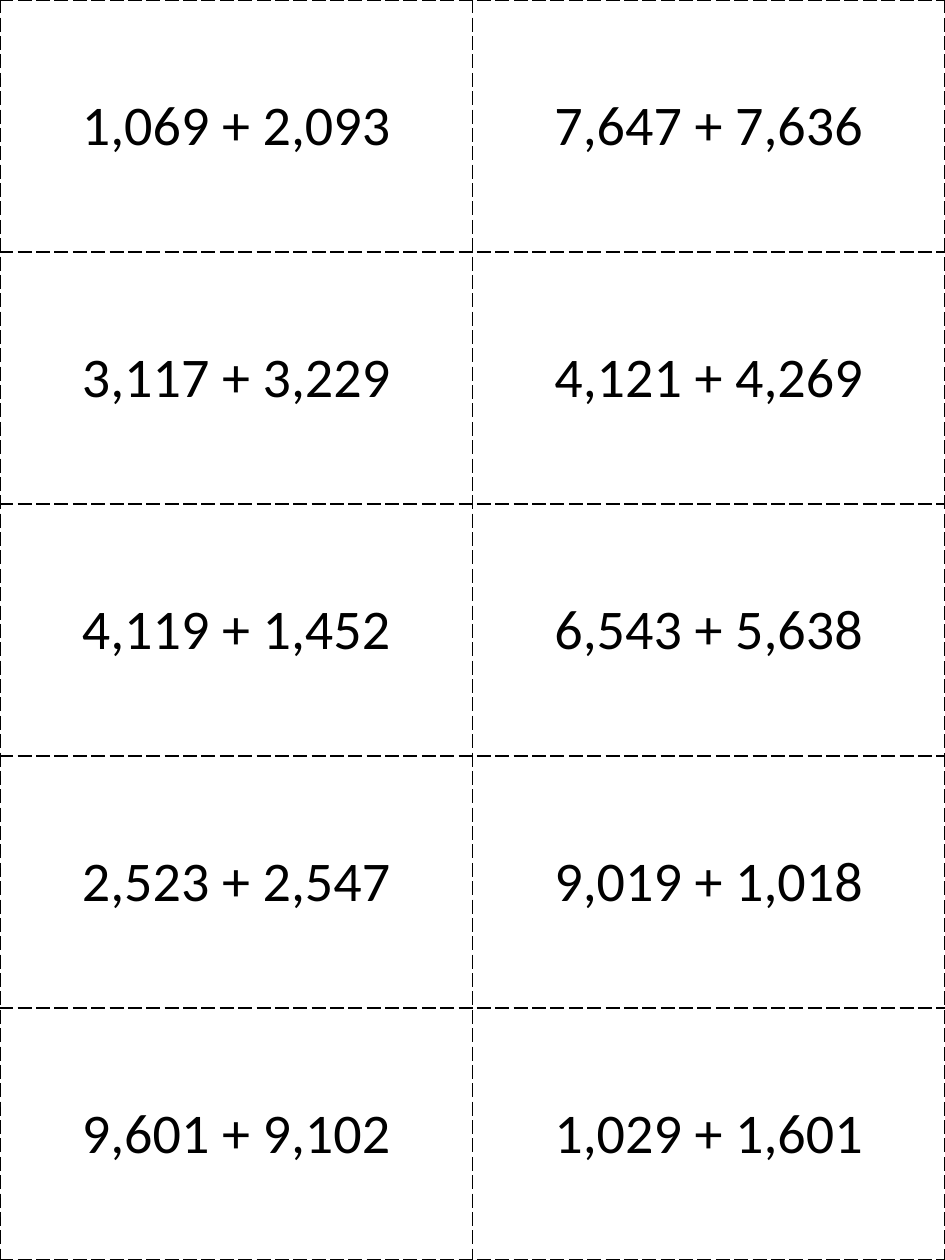
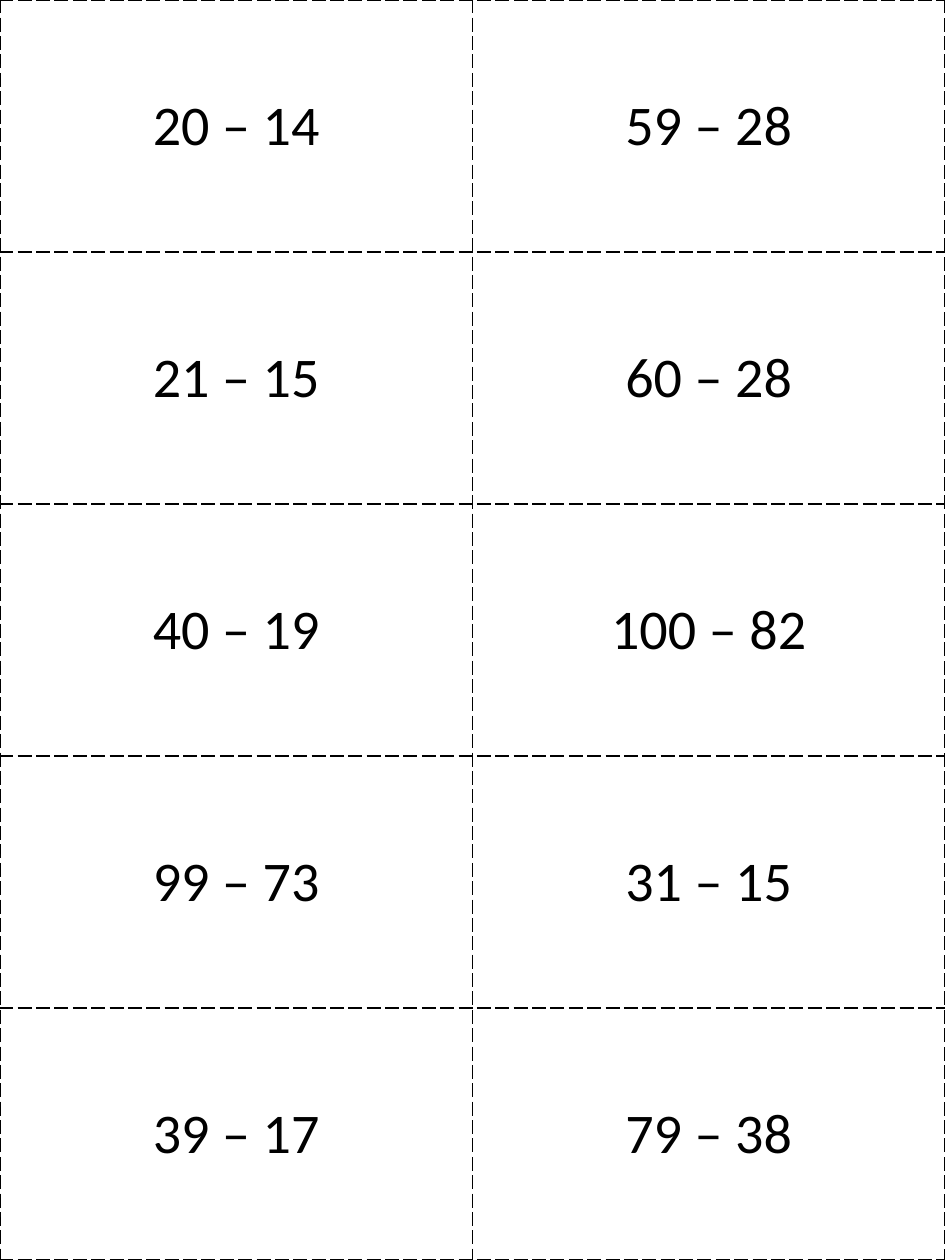
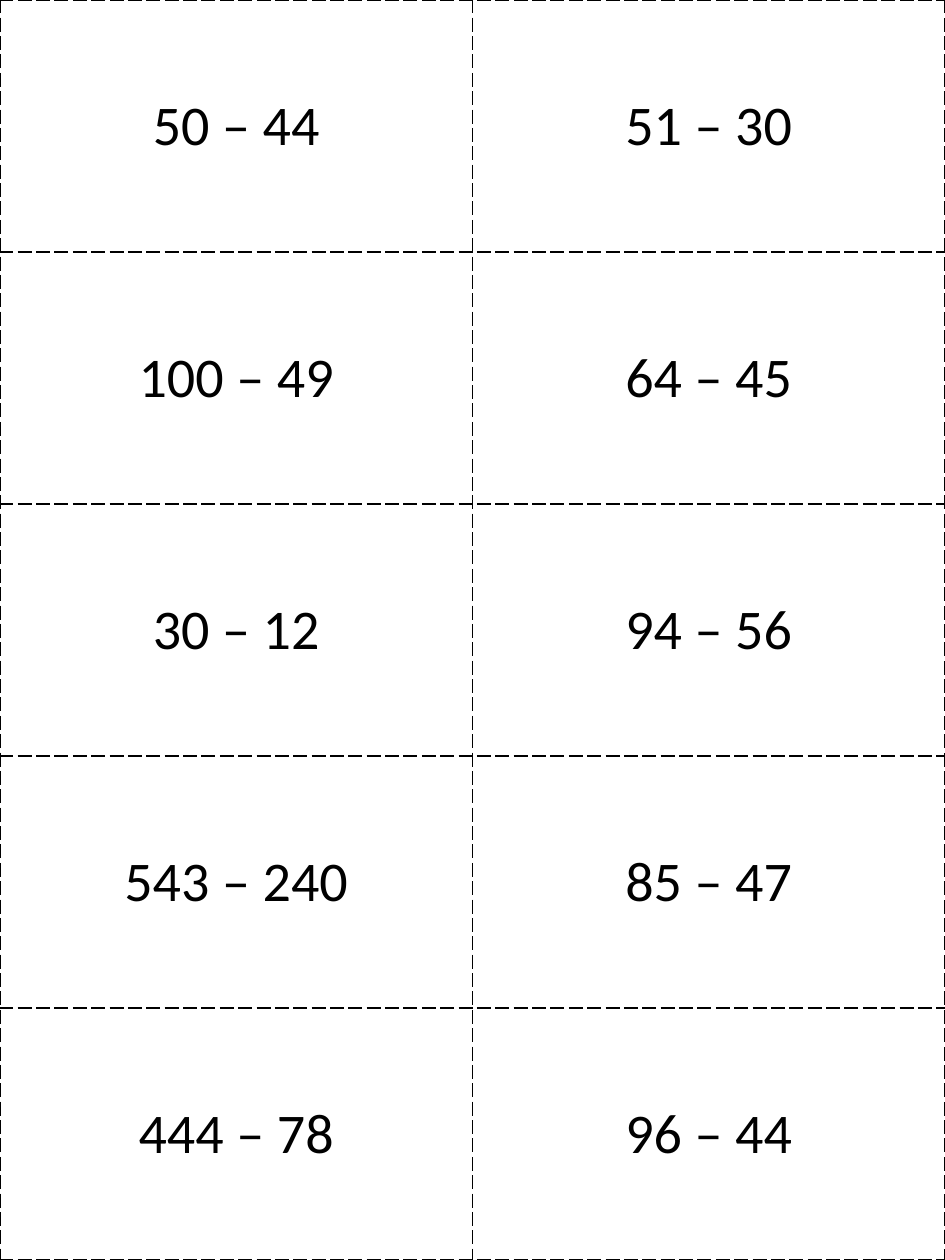
from lxml import etree
from pptx import Presentation
from pptx import util as u
from pptx.dml.color import RGBColor
from pptx.enum import text
from pptx.oxml import ns

BLACK = RGBColor(0x00, 0x00, 0x00)
WHITE = RGBColor(0xFF, 0xFF, 0xFF)
PAGE_WIDTH, PAGE_HEIGHT = u.Pt(540), u.Pt(720)
PAGE_BOX = (0, 0, PAGE_WIDTH, PAGE_HEIGHT)
BORDER_WIDTH = u.Pt(1)
BORDER_DASH = "lgDash"
CARD_FONT = {"name": "Calibri", "size": u.Pt(32), "bold": False}
PLAIN_TABLE = {"first_row": False, "horz_banding": False}

CARD_SHEETS = [
    [
        ("1,069 + 2,093", "7,647 + 7,636"),
        ("3,117 + 3,229", "4,121 + 4,269"),
        ("4,119 + 1,452", "6,543 + 5,638"),
        ("2,523 + 2,547", "9,019 + 1,018"),
        ("9,601 + 9,102", "1,029 + 1,601"),
    ],
    [
        ("20 – 14", "59 – 28"),
        ("21 – 15", "60 – 28"),
        ("40 – 19", "100 – 82"),
        ("99 – 73", "31 – 15"),
        ("39 – 17", "79 – 38"),
    ],
    [
        ("50 – 44", "51 – 30"),
        ("100 – 49", "64 – 45"),
        ("30 – 12", "94 – 56"),
        ("543 – 240", "85 – 47"),
        ("444 – 78", "96 – 44"),
    ],
]


def set_attributes(target, values):
    for name, value in values.items():
        setattr(target, name, value)


def add_cut_lines(cell):
    """Give all four sides of the cell a dashed border."""
    properties = cell._tc.get_or_add_tcPr()
    for side in ("lnL", "lnR", "lnT", "lnB"):
        line = etree.SubElement(properties, ns.qn(f"a:{side}"), w=str(BORDER_WIDTH))
        fill = etree.SubElement(line, ns.qn("a:solidFill"))
        etree.SubElement(fill, ns.qn("a:srgbClr"), val=str(BLACK))
        etree.SubElement(line, ns.qn("a:prstDash"), val=BORDER_DASH)


def fill_card(cell, problem):
    add_cut_lines(cell)
    cell.fill.background()
    cell.vertical_anchor = text.MSO_ANCHOR.MIDDLE
    paragraph = cell.text_frame.paragraphs[0]
    paragraph.alignment = text.PP_ALIGN.CENTER
    run = paragraph.add_run()
    run.text = problem
    set_attributes(run.font, CARD_FONT)
    run.font.color.rgb = BLACK


def add_card_table(slide, box, problems):
    """Divide the box evenly into one card for each problem."""
    left, top, width, height = box
    row_count, column_count = len(problems), len(problems[0])
    table = slide.shapes.add_table(
        row_count, column_count, left, top, width, height
    ).table
    set_attributes(table, PLAIN_TABLE)
    for row_index, row_problems in enumerate(problems):
        for column_index, problem in enumerate(row_problems):
            fill_card(table.cell(row_index, column_index), problem)


def add_card_slide(presentation, problems):
    slide = presentation.slides.add_slide(presentation.slide_layouts[6])
    background = slide.background.fill
    background.solid()
    background.fore_color.rgb = WHITE
    add_card_table(slide, PAGE_BOX, problems)


def main():
    presentation = Presentation()
    set_attributes(
        presentation, {"slide_width": PAGE_WIDTH, "slide_height": PAGE_HEIGHT}
    )
    for problems in CARD_SHEETS:
        add_card_slide(presentation, problems)
    presentation.save("out.pptx")


if __name__ == "__main__":
    main()
